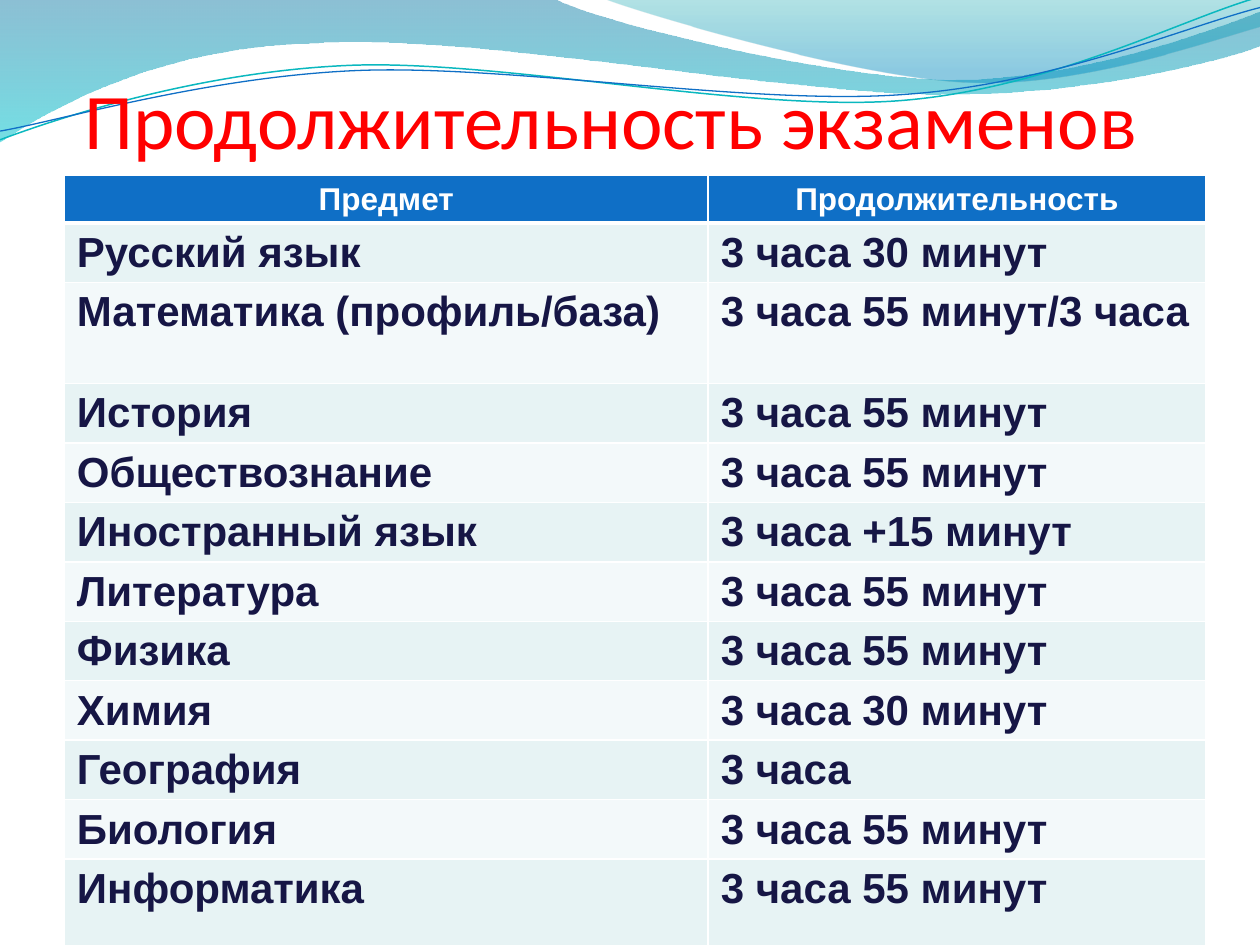
from lxml import etree
from pptx import Presentation
from pptx import util as u
from pptx.dml.color import RGBColor
from pptx.enum import text
from pptx.oxml.ns import qn

WAVES = [
    [(0, 0), [(316.8, -0.7)],
     [(342.7, 13), (478.1, 45.4), (545.8, 45.4)],
     [(614.2, 45.4), (689.8, 18.7), (720, 6.5)],
     [(720.7, 25.9)],
     [(707.8, 31.7), (626.4, 54.7), (537.1, 54)],
     [(447.8, 54), (275, 20.2), (185, 24.5)],
     [(92.9, 25.9), (33.1, 59.8), (-0.7, 81.4)],
     [(0, 0)]],
    [(344.9, -0.7),
     [(366.5, 7.9), (491, 44.6), (553.7, 46.8)],
     [(616.3, 49.7), (691.9, 23), (720, 15.1)],
     [(720, 0)],
     [(344.9, -0.7)]],
]
THREADS = [
    [(0, 79.9),
     [(34.6, 67), (113.8, 41), (199.4, 37.4)],
     [(284.4, 33.8), (427, 64.1), (513.4, 57.6)],
     [(599.8, 51.1), (675.4, 10.8), (718.6, -1.4)]],
    [(0, 74.9),
     [(33.8, 69.1), (118.1, 43.9), (203.8, 40.3)],
     [(290.2, 36.7), (429.8, 60.5), (516.2, 54)],
     [(601.9, 48.2), (677.5, 15.1), (720, 4.3)]],
]
EXAMS = [
    ("Предмет", "Продолжительность"),
    ("Русский язык", "3 часа 30 минут"),
    ("Математика (профиль/база)", "3 часа 55 минут/3 часа"),
    ("История", "3 часа 55 минут"),
    ("Обществознание", "3 часа 55 минут"),
    ("Иностранный язык", "3 часа +15 минут"),
    ("Литература", "3 часа 55 минут"),
    ("Физика", "3 часа 55 минут"),
    ("Химия", "3 часа 30 минут"),
    ("География", "3 часа"),
    ("Биология", "3 часа 55 минут"),
    ("Информатика", "3 часа 55 минут"),
]
TALL_ROWS = ("Математика (профиль/база)", "Информатика")


def rgb(value):
    """Turn a hex string into a colour."""
    return RGBColor.from_string(value)


def set_font(p, name, size, color, bold=False):
    """Format the font of a whole paragraph."""
    p.font.name, p.font.size, p.font.bold = name, u.Pt(size), bold
    p.font.color.rgb = rgb(color)


def bend_segments(sp, segments):
    """Merge each run of three line segments into one cubic curve."""
    lines = iter(list(sp._element.spPr.iter(qn("a:lnTo"))))
    for segment in segments:
        group = [next(lines) for _ in segment]
        if len(group) == 3:
            curve = etree.Element(qn("a:cubicBezTo"))
            group[0].addprevious(curve)
            for line in group:
                curve.append(line[0])
                line.getparent().remove(line)


def add_outline(s, outline, close):
    """Add a curved freeform without a shadow."""
    start, segments = outline[0], outline[1:]
    builder = s.shapes.build_freeform(*map(u.Pt, start), scale=1.0)
    points = [tuple(map(u.Pt, point)) for segment in segments for point in segment]
    builder.add_line_segments(points, close=close)
    sp = builder.convert_to_shape()
    bend_segments(sp, segments)
    sp.shadow.inherit = False
    return sp


def add_wave(s, outline, stops):
    """Add a wave with a translucent gradient running downwards."""
    sp = add_outline(s, outline, True)
    sp.line.fill.background()
    sp.fill.gradient()
    sp.fill.gradient_angle = 270
    for stop, (position, color, _) in zip(sp.fill.gradient_stops, stops):
        stop.position = position
        stop.color.rgb = rgb(color)
    colors = sp._element.spPr.iter(qn("a:srgbClr"))
    for element, (_, _, opacity) in zip(list(colors), stops):
        etree.SubElement(element, qn("a:alpha"), val=str(opacity * 1000))


def add_thread(s, outline, color, width):
    """Add a thin curved line."""
    sp = add_outline(s, outline, False)
    sp.fill.background()
    sp.line.color.rgb = rgb(color)
    sp.line.width = u.Pt(width)


def add_title(s, words):
    """Place and format the title in front of the waves."""
    sp = s.shapes.title
    s.shapes._spTree.append(sp._element)
    sp.left, sp.top, sp.width, sp.height = map(u.Pt, (48.2, 55.4, 635.8, 38.9))
    tf = sp.text_frame
    tf.text = words
    tf.word_wrap = True
    tf.auto_size = text.MSO_AUTO_SIZE.NONE
    tf.vertical_anchor = text.MSO_ANCHOR.BOTTOM
    tf.margin_left = tf.margin_right = tf.margin_bottom = 0
    p = tf.paragraphs[0]
    p.alignment = text.PP_ALIGN.LEFT
    set_font(p, "Calibri", 45, "FF0000")


def set_borders(cell, widths):
    """Draw white borders in the order left, right, top, bottom."""
    tc_pr = cell._tc.get_or_add_tcPr()
    for n, (side, width) in enumerate(zip("LRTB", widths)):
        ln = etree.Element(qn(f"a:ln{side}"), w=str(u.Pt(width)))
        fill = etree.SubElement(ln, qn("a:solidFill"))
        etree.SubElement(fill, qn("a:srgbClr"), val="FFFFFF")
        tc_pr.insert(n, ln)


def format_cell(cell, words, row):
    """Fill in one cell as header or banded body."""
    header = row == 0
    cell.text = words
    cell.fill.solid()
    band = "E7F3F4" if row % 2 else "F3F9FA"
    cell.fill.fore_color.rgb = rgb("0F6FC6" if header else band)
    set_borders(cell, (1, 1, 3 if row == 1 else 1, 3 if header else 1))
    p = cell.text_frame.paragraphs[0]
    p.alignment = text.PP_ALIGN.CENTER if header else text.PP_ALIGN.LEFT
    set_font(p, "Arial", 18 if header else 24, "FFFFFF" if header else "161645", True)


def add_exam_table(s, rows):
    """Add the table of subjects and durations."""
    heights = [57.6 if row[0] in TALL_ROWS else 32.4 for row in rows]
    heights[0] = 25.6
    widths = (367.9, 284.4)
    box = map(u.Pt, (36.8, 100.1, sum(widths), sum(heights)))
    table = s.shapes.add_table(len(rows), len(widths), *box).table
    for column, width in zip(table.columns, widths):
        column.width = u.Pt(width)
    for r, (words, height) in enumerate(zip(rows, heights)):
        table.rows[r].height = u.Pt(height)
        for c, word in enumerate(words):
            format_cell(table.cell(r, c), word, r)


def main():
    """Build the slide and save it."""
    prs = Presentation()
    prs.slide_width, prs.slide_height = u.Pt(720), u.Pt(540)
    s = prs.slides.add_slide(prs.slide_layouts[5])
    add_wave(s, WAVES[0], [(0, "0074A1", 45), (1, "00C6CF", 55)])
    add_wave(s, WAVES[1], [(0, "00A1A9", 30), (0.8, "008BBF", 45)])
    add_thread(s, THREADS[0], "0AB8BF", 0.85)
    add_thread(s, THREADS[1], "0F6FC6", 0.75)
    add_title(s, "Продолжительность экзаменов")
    add_exam_table(s, EXAMS)
    prs.save("out.pptx")


if __name__ == "__main__":
    main()
